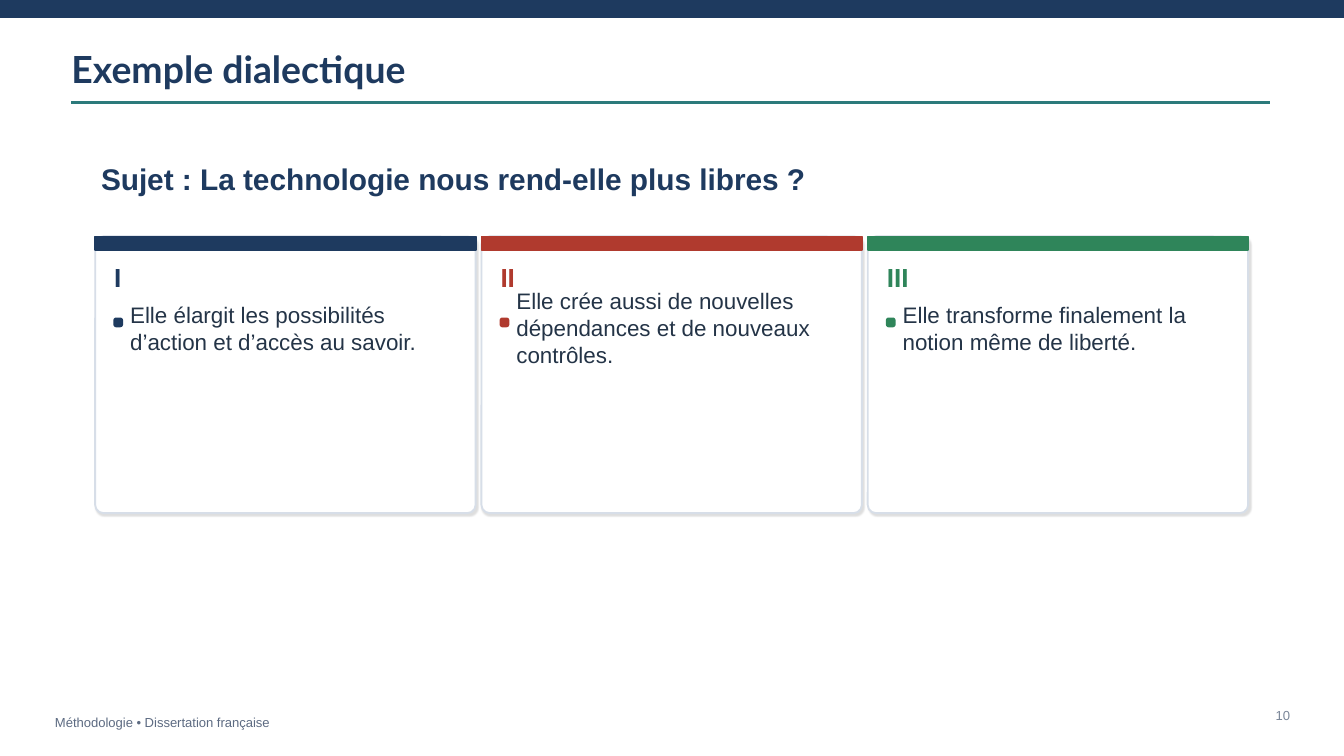
from lxml.etree import SubElement
from pptx import Presentation
from pptx.dml.color import RGBColor
from pptx.enum.shapes import MSO_CONNECTOR, MSO_SHAPE
from pptx.enum.text import MSO_ANCHOR, PP_ALIGN
from pptx.oxml.ns import qn
from pptx.util import Cm, Pt

NAVY = RGBColor(0x1E, 0x3A, 0x5F)
RED = RGBColor(0xB0, 0x3A, 0x2E)
GREEN = RGBColor(0x2F, 0x85, 0x5A)
TEAL = RGBColor(0x2C, 0x7A, 0x7B)
WHITE = RGBColor(0xFF, 0xFF, 0xFF)
EDGE = RGBColor(0xD7, 0xDE, 0xE8)
INK = RGBColor(0x24, 0x34, 0x47)
SLATE = RGBColor(0x5D, 0x6B, 0x82)
GREY = RGBColor(0x7A, 0x86, 0x98)

TITLE = "Exemple dialectique"
TOPIC = "Sujet : La technologie nous rend-elle plus libres ?"
FOOTER = "Méthodologie • Dissertation française"
NUMBER = "10"
CARDS = [
    ("I", "Elle élargit les possibilités d’action et d’accès au savoir.", NAVY),
    ("II", "Elle crée aussi de nouvelles dépendances et de nouveaux contrôles.", RED),
    ("III", "Elle transforme finalement la notion même de liberté.", GREEN),
]
LEFT, TOP, WIDTH, HEIGHT, STEP = 1.8, 4.47, 7.19, 5.23, 7.3
PAD, INDENT = 0.36, 0.66

deck = Presentation()
deck.slide_width, deck.slide_height = Cm(25.4), Cm(14.29)
slide = deck.slides.add_slide(deck.slide_layouts[6])


def add_text(words, x, y, w, h, size, color, bold=False, font="Arial", align=PP_ALIGN.LEFT):
    frame = slide.shapes.add_textbox(Cm(x), Cm(y), Cm(w), Cm(h)).text_frame
    frame.word_wrap = True
    frame.vertical_anchor = MSO_ANCHOR.MIDDLE
    frame.margin_left = frame.margin_right = frame.margin_top = frame.margin_bottom = 0
    para = frame.paragraphs[0]
    para.alignment = align
    run = para.add_run()
    run.text = words
    run.font.name, run.font.size, run.font.bold = font, Pt(size), bold
    run.font.color.rgb = color


def add_box(x, y, w, h, fill, line, round_by=None):
    kind = MSO_SHAPE.RECTANGLE if round_by is None else MSO_SHAPE.ROUNDED_RECTANGLE
    box = slide.shapes.add_shape(kind, Cm(x), Cm(y), Cm(w), Cm(h))
    if round_by is not None:
        box.adjustments[0] = round_by
    box.shadow.inherit = False
    box.fill.solid()
    box.fill.fore_color.rgb = fill
    box.line.color.rgb = line
    box.line.width = Pt(1)
    return box


def add_shadow(box):
    effects = box.element.spPr.find(qn("a:effectLst"))
    shade = SubElement(effects, qn("a:outerShdw"), blurRad=str(Pt(1)), dist=str(Pt(1)),
                       dir=str(45 * 60000), algn="bl", rotWithShape="0")
    color = SubElement(shade, qn("a:srgbClr"), val="000000")
    SubElement(color, qn("a:alpha"), val="12000")


def add_card(x, label, words, color):
    add_shadow(add_box(x, TOP, WIDTH, HEIGHT, WHITE, EDGE, 0.03))
    add_box(x, TOP, WIDTH, 0.26, color, color)
    add_text(label, x + PAD, TOP + 0.44, 6.5, 0.66, 14, color, True)
    add_box(x + PAD, TOP + 1.55, 0.15, 0.15, color, color, 0.25)
    add_text(words, x + INDENT, TOP + 1.37, 6.25, 0.71, 12, INK)


add_box(0, 0, 25.4, 0.33, NAVY, NAVY)
add_text(FOOTER, 1.04, 13.43, 8, 0.43, 7, SLATE)
add_text(TITLE, 1.35, 0.86, 16.6, 0.86, 20, NAVY, True, "Lato")
rule = slide.shapes.add_connector(MSO_CONNECTOR.STRAIGHT, Cm(1.35), Cm(1.94), Cm(24), Cm(1.94))
rule.line.color.rgb = TEAL
rule.line.width = Pt(1.5)
SubElement(rule.element.spPr, qn("a:effectLst"))
add_text(TOPIC, 1.91, 3.03, 15.62, 0.69, 16, NAVY, True)
for i, card in enumerate(CARDS):
    add_card(LEFT + i * STEP, *card)
add_text(NUMBER, 23.72, 13.3, 0.66, 0.43, 7, GREY, align=PP_ALIGN.RIGHT)

deck.save("out.pptx")
